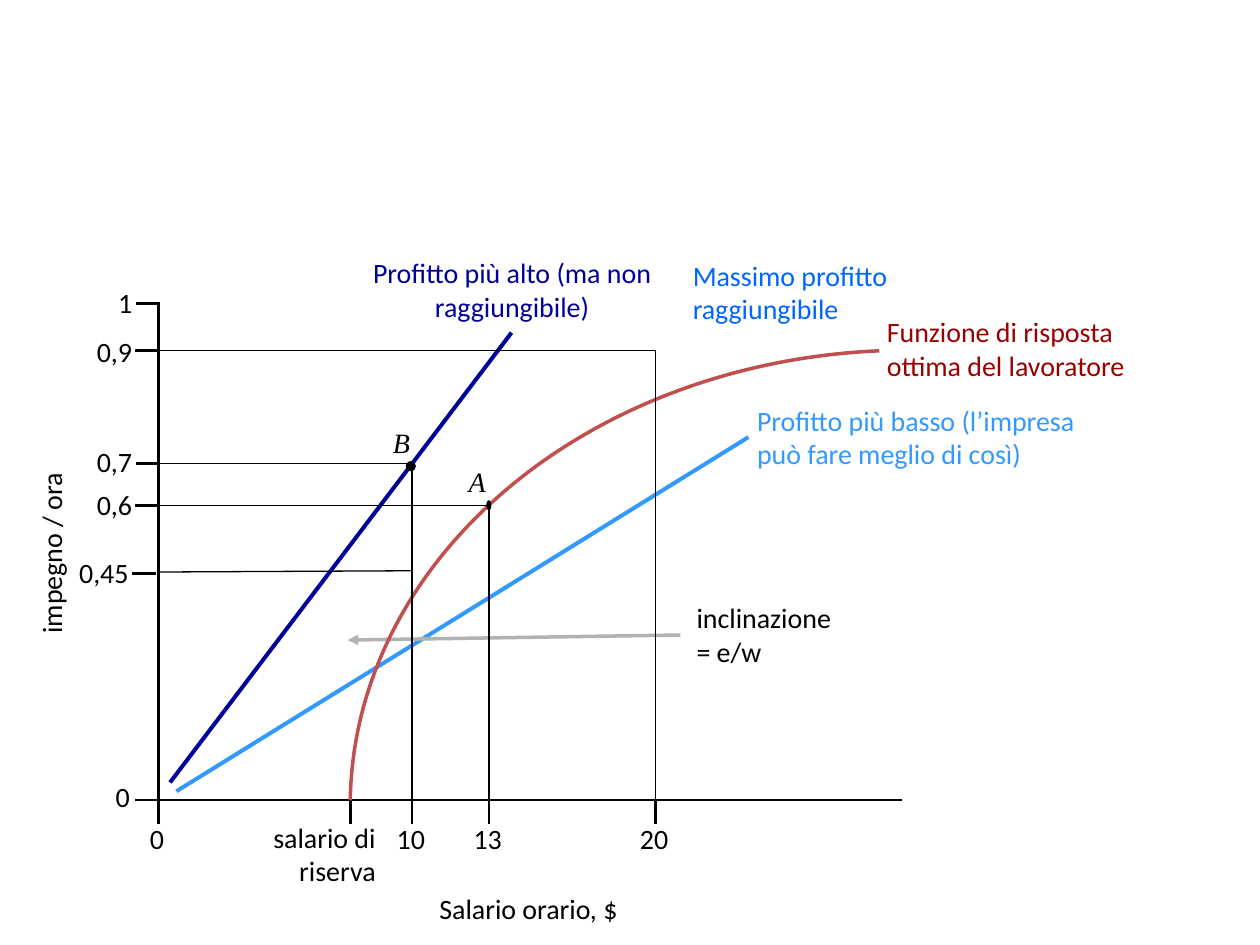
"""Build the wage and effort chart slide with the worker's best response curve."""
from pptx import Presentation
from pptx.util import Inches, Pt
from pptx.dml.color import RGBColor
from pptx.enum.shapes import MSO_CONNECTOR, MSO_SHAPE
from pptx.enum.text import PP_ALIGN
from pptx.oxml.ns import qn
from lxml.etree import SubElement

BLACK = RGBColor(0x00, 0x00, 0x00)
NAVY = RGBColor(0x00, 0x00, 0x99)
SKY = RGBColor(0x33, 0x99, 0xFF)
BLUE = RGBColor(0x00, 0x66, 0xFF)
RED = RGBColor(0xC0, 0x50, 0x4D)
MAROON = RGBColor(0x99, 0x00, 0x00)
GREY = RGBColor(0xB2, 0xB2, 0xB2)

LEFT, BASE, TOP, RIGHT = 1.26, 6.35, 2.4, 7.16
TICK = 0.19
ROW = 0.36

EFFORTS = [
    ("0", 6.35, 0.82, 6.14, 0.27, 1.26),
    ("0,45", 4.55, 0.53, 4.36, 0.68, 1.24),
    ("0,6", 4.01, 0.67, 3.82, 0.59, 1.26),
    ("0,7", 3.68, 0.67, 3.48, 0.48, 1.27),
    ("0,9", 2.78, 0.67, 2.61, 0.59, 1.26),
    ("1", 2.41, 0.84, 2.22, 0.43, 1.27),
]
WAGES = [
    ("0", 1.26, 1.09),
    ("", 2.78, 0),
    ("10", 3.27, 3.05),
    ("13", 3.88, 3.66),
    ("20", 5.2, 4.98),
]
GUIDES = [(3.27, 3.68), (3.88, 4.01), (5.2, 2.78)]
POINTS = [
    ("B", 3.02, 3.33, (3.22, 3.66, 0.08, 0.08)),
    ("A", 3.62, 3.64, (3.86, 3.97, 0.04, 0.08)),
]
NOTES = [
    ("Profitto più basso (l’impresa può fare meglio di così)",
     (5.91, 3.15, 2.75, 0.63), SKY, PP_ALIGN.LEFT),
    ("Massimo profitto\nraggiungibile", (5.4, 2, 1.83, 0.9), BLUE, PP_ALIGN.LEFT),
    ("Profitto più alto (ma non\nraggiungibile)",
     (2.85, 1.98, 2.43, 0.66), NAVY, PP_ALIGN.CENTER),
    ("inclinazione = e/w", (5.43, 4.72, 1.27, 0.63), BLACK, PP_ALIGN.LEFT),
    ("Funzione di risposta\nottima del lavoratore",
     (6.94, 2.45, 2.11, 0.63), MAROON, PP_ALIGN.LEFT),
    ("salario di\nriserva", (1.73, 6.46, 1.35, 0.63), BLACK, PP_ALIGN.RIGHT),
    ("Salario orario, $", (1.23, 7.03, 5.93, ROW), BLACK, PP_ALIGN.CENTER),
]

deck = Presentation()
deck.slide_width, deck.slide_height = Inches(10), Inches(7.5)
slide = deck.slides.add_slide(deck.slide_layouts[6])


def add_text(text, box, color=BLACK, align=PP_ALIGN.LEFT, font="Calibri",
             italic=False, turn=0, pads=(0.1, 0.05)):
    shape = slide.shapes.add_textbox(*map(Inches, box))
    shape.rotation = turn
    frame = shape.text_frame
    frame.word_wrap = True
    frame.margin_left = frame.margin_right = Inches(pads[0])
    frame.margin_top = frame.margin_bottom = Inches(pads[1])
    frame.text = text
    for para in frame.paragraphs:
        para.alignment = align
        style = para.runs[0].font
        style.name, style.size, style.italic = font, Pt(16), italic
        style.color.rgb = color


def add_line(start, end, width=1.5, color=BLACK, arrow=False):
    line = slide.shapes.add_connector(
        MSO_CONNECTOR.STRAIGHT, *map(Inches, start + end))
    line.line.color.rgb = color
    line.line.width = Pt(width)
    props = line._element.spPr
    if arrow:
        SubElement(props.find(qn("a:ln")), qn("a:tailEnd"), type="triangle")
    SubElement(props, qn("a:effectLst"))


def add_dot(box):
    dot = slide.shapes.add_shape(MSO_SHAPE.OVAL, *map(Inches, box))
    dot.shadow.inherit = False
    dot.fill.solid()
    dot.fill.fore_color.rgb = BLACK
    dot.line.fill.background()


def add_curve():
    curve = slide.shapes.add_shape(
        MSO_SHAPE.ARC, *map(Inches, (2.78, 2.78, 8.85, 7.23)))
    curve.shadow.inherit = False
    curve.adjustments[0] = 108.33
    curve.adjustments[1] = 159.85
    curve.fill.background()
    curve.line.color.rgb = RED
    curve.line.width = Pt(2)


def main():
    add_line((LEFT, TOP), (LEFT, BASE))
    add_line((LEFT, BASE), (RIGHT, BASE))
    for text, y, left, top, width, end in EFFORTS:
        add_text(text, (left, top, width, ROW))
        add_line((end - TICK, y), (end, y))
    for text, x, left in WAGES:
        add_line((x, BASE), (x, BASE + TICK))
        if text:
            add_text(text, (left, 6.47, 0.45, ROW))
    add_line((4.06, 2.64), (1.35, 6.21), width=2.3, color=NAVY)
    add_line((5.94, 3.47), (1.4, 6.28), width=2.3, color=SKY)
    add_line((5.4, 5.04), (2.76, 5.08), width=2, color=GREY, arrow=True)
    add_curve()
    for x, y in GUIDES:
        add_line((LEFT, y), (x, y), width=0.75)
        add_line((x, y), (x, BASE), width=0.75)
    add_line((LEFT, 4.54), (3.26, 4.53), width=0.75)
    for text, left, top, dot in POINTS:
        add_text(text, (left, top, 0.48, ROW), font="Times New Roman", italic=True)
        add_dot(dot)
    for text, box, color, align in NOTES:
        add_text(text, box, color=color, align=align)
    add_text("impegno / ora", (-1.61, 4.21, 3.92, ROW), align=PP_ALIGN.CENTER,
             turn=270, pads=(0.05, 0.1))
    deck.save("out.pptx")


if __name__ == "__main__":
    main()
